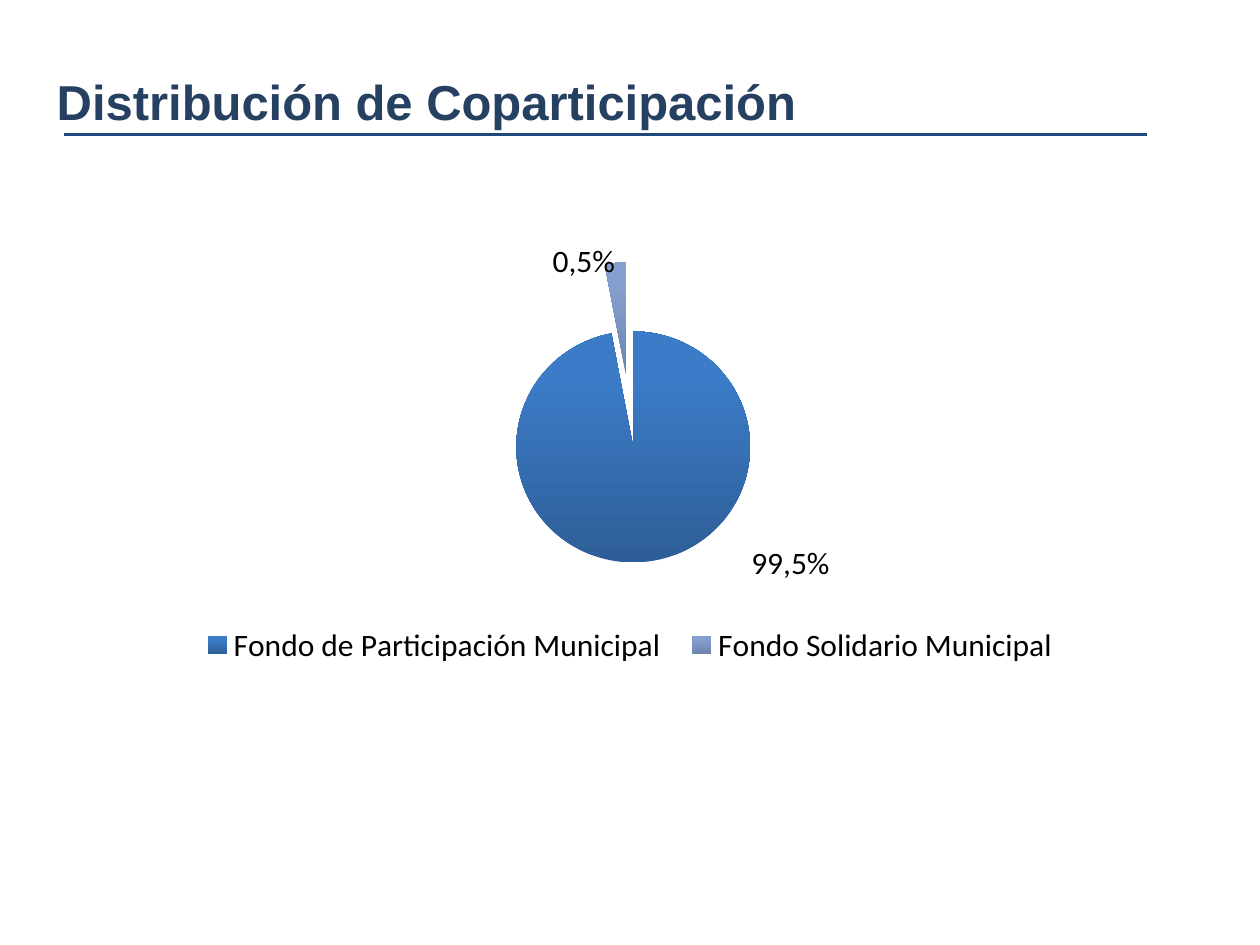
from lxml import etree
from pptx import Presentation
from pptx.chart.data import CategoryChartData
from pptx.dml.color import RGBColor
from pptx.enum.chart import XL_CHART_TYPE as ChartType, XL_LEGEND_POSITION as LegendPosition
from pptx.enum.chart import XL_LABEL_POSITION as LabelPosition
from pptx.enum.shapes import MSO_CONNECTOR as Connector
from pptx.enum.text import MSO_ANCHOR as Anchor, PP_ALIGN as Align
from pptx.oxml import parse_xml
from pptx.oxml.ns import nsdecls, qn
from pptx.util import Inches, Pt

COLORS = {
    "title": "254061",
    "rule": "1F497D",
    "text": "000000",
}
SLICES = [
    {"name": "Fondo de Participación Municipal", "value": 97, "label": "99,5%",
     "gradient": ("2E5E97", "3C7BC7"), "offset": (0.12, -0.05)},
    {"name": "Fondo Solidario Municipal", "value": 3, "label": "0,5%",
     "gradient": ("6C83AC", "859FCE"), "offset": (0, 0.05)},
]


def set_font(font, name, size, color, bold=False):
    values = {"name": name, "size": Pt(size), "bold": bold}
    for attribute, value in values.items():
        setattr(font, attribute, value)
    font.color.rgb = RGBColor.from_string(COLORS[color])


def layout_xml(target, **places):
    items = "".join(f'<c:{key} val="{value}"/>' for key, value in places.items())
    return parse_xml(
        f'<c:layout {nsdecls("c")}><c:manualLayout>{target}{items}</c:manualLayout></c:layout>')


presentation = Presentation()
presentation.slide_width, presentation.slide_height = Inches(10), Inches(7.5)
slide = presentation.slides.add_slide(presentation.slide_layouts[5])

chart_data = CategoryChartData(number_format="0")
chart_data.categories = [part["name"] for part in SLICES]
chart_data.add_series("Series 1", [part["value"] for part in SLICES])
chart = slide.shapes.add_chart(
    ChartType.PIE, Inches(1.48), Inches(1.73), Inches(7.04), Inches(3.89), chart_data).chart
set_font(chart.font, "Calibri", 18, "text")
chart.has_title = False
chart.has_legend = True
legend = chart.legend
legend.position = LegendPosition.BOTTOM
legend.include_in_layout = False
for old_layout in legend._element.findall(qn("c:layout")):
    legend._element.remove(old_layout)
legend._element.find(qn("c:legendPos")).addnext(
    layout_xml("", xMode="edge", yMode="edge", x=0, y=0.82, w=1, h=0.1))

plot = chart.plots[0]
plot_area = plot._element.getparent()
for old_layout in plot_area.findall(qn("c:layout")):
    plot_area.remove(old_layout)
plot_area.insert(0, layout_xml(
    '<c:layoutTarget val="inner"/>', xMode="edge", yMode="edge", x=0, y=0.08, w=1, h=0.62))

plot.vary_by_categories = True
series = plot.series[0]
explosion = etree.Element(qn("c:explosion"), val="30")
series._element.find(qn("c:tx")).addnext(explosion)
for index, part in enumerate(SLICES):
    point = series.points[index]
    fill = point.format.fill
    fill.gradient()
    fill.gradient_angle = 90
    for stop, color, position in zip(fill.gradient_stops, part["gradient"], (0, 0.8)):
        stop.color.rgb = RGBColor.from_string(color)
        stop.position = position
    point.format.line.fill.background()
    label = point.data_label
    label.text_frame.text = part["label"]
    set_font(label.text_frame.paragraphs[0].runs[0].font, "Calibri", 18, "text")
    label.position = LabelPosition.OUTSIDE_END
    x, y = part["offset"]
    label._dLbl.find(qn("c:idx")).addnext(layout_xml("", x=x, y=y))
for leader_lines in plot._element.iter(qn("c:showLeaderLines")):
    leader_lines.set("val", "0")

rule = slide.shapes.add_connector(
    Connector.STRAIGHT, Inches(0.51), Inches(1.07), Inches(9.1), Inches(1.07))
rule.line.color.rgb = RGBColor.from_string(COLORS["rule"])
rule.line.width = Pt(1.5)
etree.SubElement(rule._element.spPr, qn("a:effectLst"))

title = slide.shapes.title
title_box = {"left": 0.35, "top": 0.52, "width": 8.82, "height": 0.57}
for attribute, value in title_box.items():
    setattr(title, attribute, Inches(value))
title.text_frame.text = "Distribución de Coparticipación"
title.text_frame.vertical_anchor = Anchor.TOP
title.text_frame.word_wrap = True
paragraph = title.text_frame.paragraphs[0]
paragraph.alignment = Align.LEFT
set_font(paragraph.runs[0].font, "Arial", 28, "title", bold=True)

presentation.save("out.pptx")
